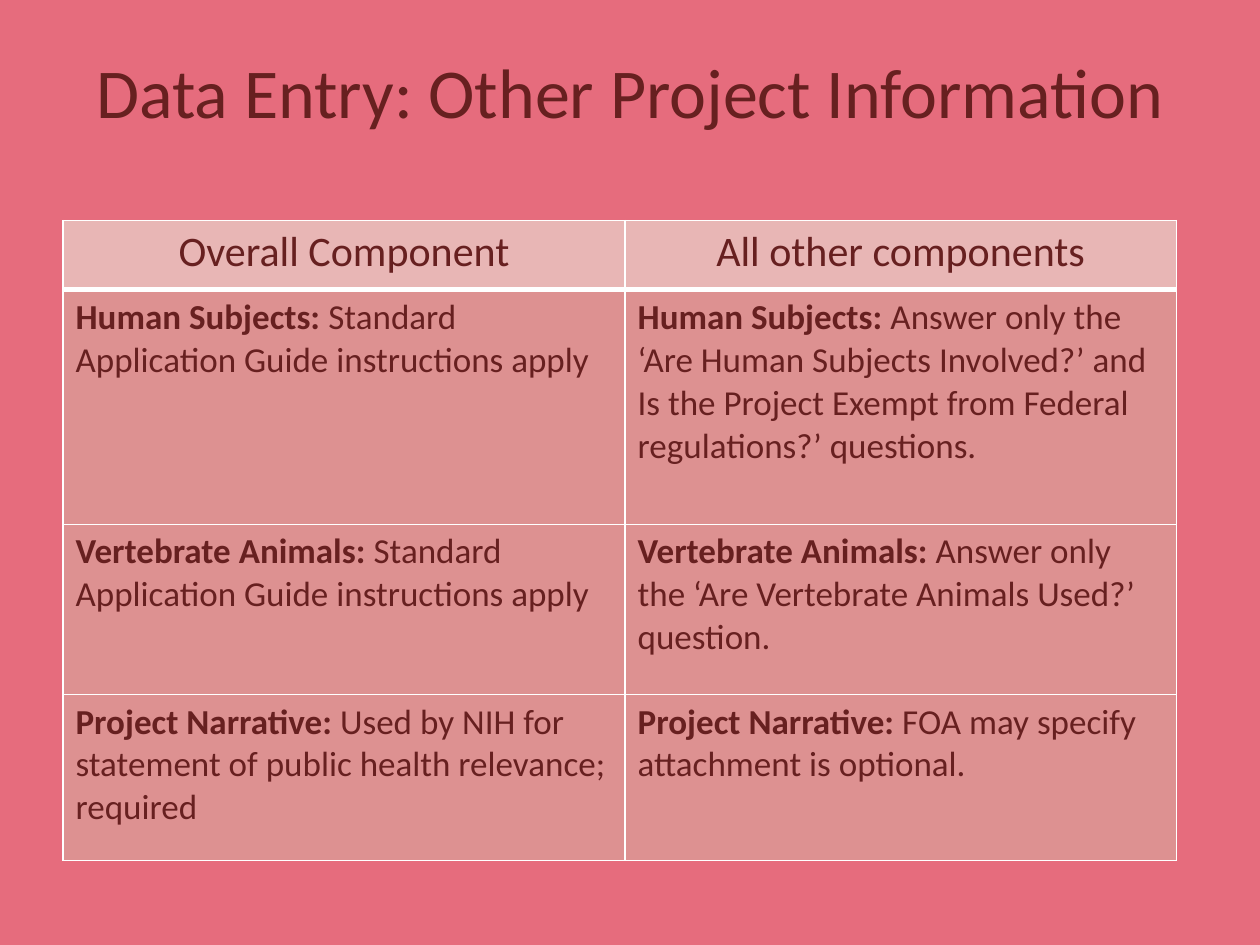
from lxml import etree
from pptx import Presentation
from pptx import util as u
from pptx.dml.color import RGBColor
from pptx.enum import text
from pptx.oxml.ns import qn

INK, WHITE = "672020", "FFFFFF"
BACKGROUND, HEADER_FILL, BODY_FILL = "E66C7D", "E8B6B5", "DD9191"
TITLE = {"size": u.Pt(40), "name": "Calibri", "bold": False}
HEADER = {"size": u.Pt(24), "name": "Calibri", "bold": False}
BODY = {"size": u.Pt(20), "name": "Calibri", "bold": False}

COLUMN_WIDTHS = [321.2, 315]
ROW_HEIGHTS = [39.6, 134, 97.2, 95]
HEADINGS = ["Overall Component", "All other components"]
STANDARD = "Standard Application Guide instructions apply"
ROWS = [
    ("Human Subjects: ", STANDARD,
     "Answer only the ‘Are Human Subjects Involved?’ and Is the Project "
     "Exempt from Federal regulations?’ questions."),
    ("Vertebrate Animals: ", STANDARD,
     "Answer only the ‘Are Vertebrate Animals Used?’ question."),
    ("Project Narrative: ",
     "Used by NIH for statement of public health relevance; required",
     "FOA may specify attachment is optional."),
]


def color(value):
    return RGBColor.from_string(value)


class SlideBuilder:
    def __init__(self, presentation):
        self.slide = presentation.slides.add_slide(presentation.slide_layouts[5])
        fill = self.slide.background.fill
        fill.solid()
        fill.fore_color.rgb = color(BACKGROUND)

    def run(self, paragraph, words, style, **changes):
        font = paragraph.add_run()
        font.text = words
        font = font.font
        for name, value in {**style, **changes}.items():
            setattr(font, name, value)
        font.color.rgb = color(INK)

    def title(self, words, left, top, width, height):
        shape = self.slide.shapes.title
        box = {"left": left, "top": top, "width": width, "height": height}
        for name, value in box.items():
            setattr(shape, name, u.Pt(value))
        frame = shape.text_frame
        frame.word_wrap = True
        frame.auto_size = text.MSO_AUTO_SIZE.SHAPE_TO_FIT_TEXT
        frame.vertical_anchor = text.MSO_ANCHOR.MIDDLE
        paragraph = frame.paragraphs[0]
        paragraph.alignment = text.PP_ALIGN.CENTER
        self.run(paragraph, words, TITLE)

    def table(self, left, top, widths, heights):
        shape = self.slide.shapes.add_table(
            len(heights), len(widths), u.Pt(left), u.Pt(top),
            u.Pt(sum(widths)), u.Pt(sum(heights)))
        for column, width in zip(shape.table.columns, widths):
            column.width = u.Pt(width)
        for row, height in zip(shape.table.rows, heights):
            row.height = u.Pt(height)
        return shape.table

    def cell(self, cell, runs, style, fill, alignment, bottom=1):
        paragraph = cell.text_frame.paragraphs[0]
        paragraph.alignment = alignment
        for words, bold in runs:
            self.run(paragraph, words, style, bold=bold)
        # Borders come before the fill in the cell properties
        properties = cell._tc.get_or_add_tcPr()
        for side, width in {"L": 1, "R": 1, "T": 1, "B": bottom}.items():
            line = etree.SubElement(properties, qn(f"a:ln{side}"), w=str(u.Pt(width)))
            solid = etree.SubElement(line, qn("a:solidFill"))
            etree.SubElement(solid, qn("a:srgbClr"), val=WHITE)
        cell.fill.solid()
        cell.fill.fore_color.rgb = color(fill)


def main():
    presentation = Presentation()
    presentation.slide_width, presentation.slide_height = u.Pt(720), u.Pt(540)
    builder = SlideBuilder(presentation)

    # Title
    builder.title("Data Entry: Other Project Information", 30, 24, 660, 55.7)

    # Table: heading row, then one row per topic
    table = builder.table(36, 126, COLUMN_WIDTHS, ROW_HEIGHTS)
    for column, heading in enumerate(HEADINGS):
        builder.cell(table.cell(0, column), [(heading, False)], HEADER,
                     HEADER_FILL, text.PP_ALIGN.CENTER, bottom=3)
    for row, (topic, *answers) in enumerate(ROWS, start=1):
        for column, answer in enumerate(answers):
            builder.cell(table.cell(row, column), [(topic, True), (answer, False)],
                         BODY, BODY_FILL, text.PP_ALIGN.LEFT)

    presentation.save("out.pptx")


if __name__ == "__main__":
    main()
